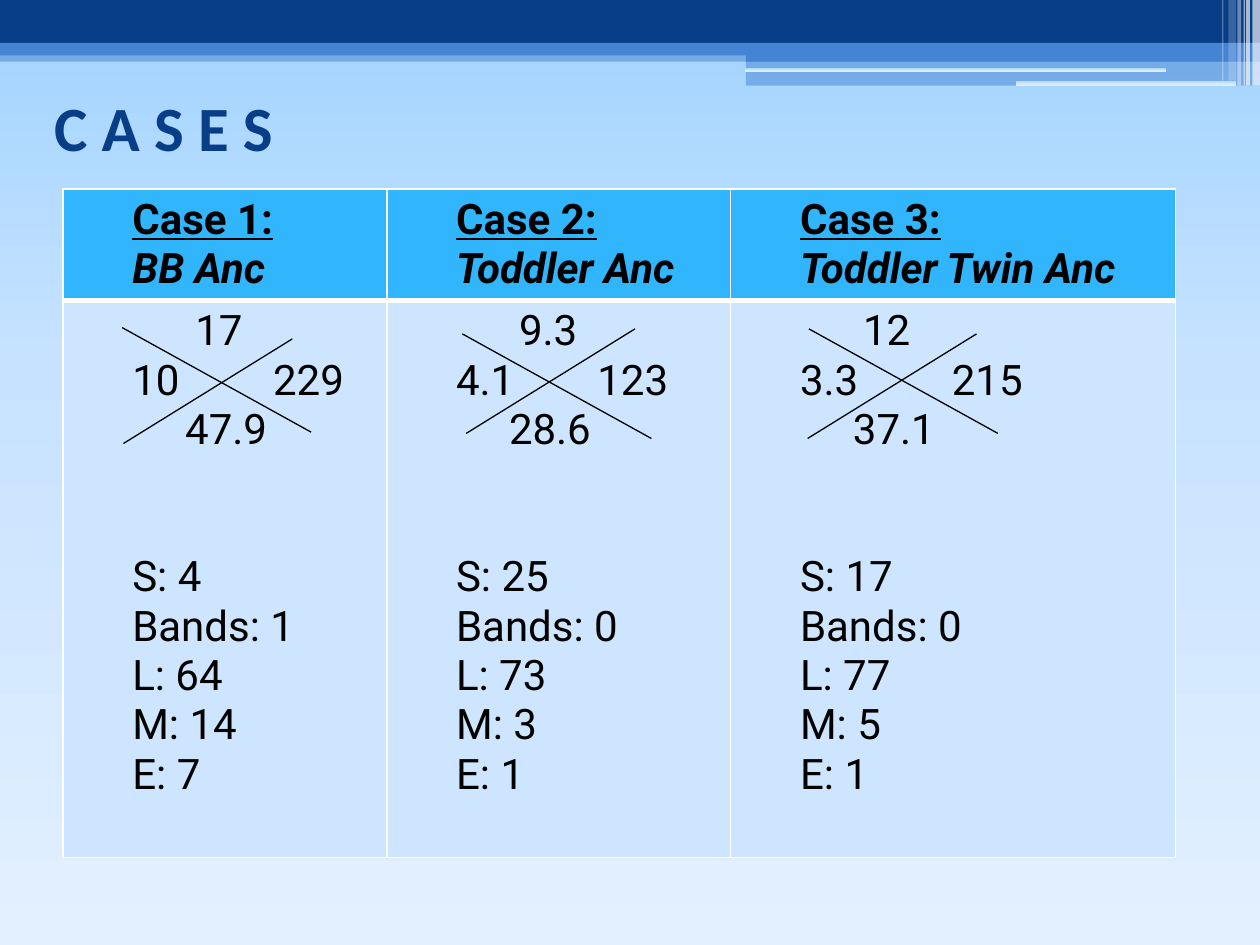
from copy import deepcopy

from lxml import etree
from pptx import Presentation
from pptx.dml.color import RGBColor
from pptx.enum.shapes import MSO_CONNECTOR, MSO_SHAPE
from pptx.enum.text import MSO_ANCHOR, PP_ALIGN
from pptx.oxml.ns import qn
from pptx.util import Inches, Pt

RECT, ROUND = MSO_SHAPE.RECTANGLE, MSO_SHAPE.ROUNDED_RECTANGLE
STRAIGHT = MSO_CONNECTOR.STRAIGHT
MIDDLE, LEFT = MSO_ANCHOR.MIDDLE, PP_ALIGN.LEFT

NAVY = RGBColor(0x07, 0x3E, 0x87)
BLUE = RGBColor(0x45, 0x84, 0xD3)
HEADER = RGBColor(0x31, 0xB6, 0xFD)
BODY = RGBColor(0xCD, 0xE5, 0xFE)
WHITE = RGBColor(0xFF, 0xFF, 0xFF)
BLACK = RGBColor(0, 0, 0)
SKY = [(0, RGBColor(0xA1, 0xD3, 0xFF)), (0.38, RGBColor(0xC6, 0xE2, 0xFF)),
       (1, RGBColor(0xE3, 0xF0, 0xFF))]


def fill_sky(fill, element):
    """Vertical three-stop gradient."""
    fill.gradient()
    fill.gradient_angle = 270
    stops = element.find(".//" + qn("a:gsLst"))
    stops.append(deepcopy(stops[-1]))
    for stop, (position, color) in zip(fill.gradient_stops, SKY):
        stop.position = position
        stop.color.rgb = color


def add_paragraph(tf, *texts, indent=0.45, **font):
    """Write runs into the empty first paragraph, or add one."""
    p = tf.paragraphs[0]
    if p.runs:
        p = tf.add_paragraph()
    p.level = 1
    pPr = p._p.get_or_add_pPr()
    pPr.set("marL", str(Inches(indent)))
    pPr.set("indent", "0")
    style = {"name": "Roboto", "size": Pt(24), "bold": False, **font}
    for text in texts:
        r = p.add_run()
        r.text = text
        r.font.color.rgb = BLACK
        for name, value in style.items():
            setattr(r.font, name, value)
    return p


prs = Presentation()
prs.slide_width, prs.slide_height = Inches(10), Inches(7.5)
s = prs.slides.add_slide(prs.slide_layouts[5])
fill_sky(s.background.fill, s._element)

# Top bands and stripes: shape, left, top, width, height, colour, opacity %
bands = [
    (RECT, 0, 0.4, 10, 0.09, BLUE, 50),
    (RECT, 0, 0, 10, 0.34, NAVY, 100),
    (RECT, 0, 0.34, 10, 0.1, BLUE, 100),
    (RECT, 5.92, 0.39, 4.08, 0.1, BLUE, 100),
    (RECT, 5.92, 0.48, 4.08, 0.2, BLUE, 50),
    (ROUND, 5.91, 0.54, 3.35, 0.03, None, 100),
    (ROUND, 8.06, 0.64, 1.75, 0.04, None, 100),
    (RECT, 9.94, 0, 0.06, 0.68, WHITE, 65),
    (RECT, 9.89, 0, 0.03, 0.68, WHITE, 65),
    (RECT, 9.87, 0, 0.01, 0.68, WHITE, 60),
    (RECT, 9.82, 0, 0.03, 0.68, WHITE, 40),
    (RECT, 9.75, 0, 0.06, 0.64, WHITE, 20),
    (RECT, 9.7, 0, 0.01, 0.64, WHITE, 30),
]
for kind, x, y, w, h, color, opacity in bands:
    sp = s.shapes.add_shape(kind, Inches(x), Inches(y), Inches(w), Inches(h))
    sp.shadow.inherit = False
    sp.line.fill.background()
    if color is None:
        fill_sky(sp.fill, sp._element)
        continue
    sp.fill.solid()
    sp.fill.fore_color.rgb = color
    if opacity < 100:
        clr = sp._element.spPr.find(".//" + qn("a:srgbClr"))
        etree.SubElement(clr, qn("a:alpha")).set("val", str(opacity * 1000))

# Title
title = s.shapes.title
title.left, title.top = Inches(0.33), Inches(0.42)
title.width, title.height = Inches(9), Inches(1.17)
tf = title.text_frame
tf.vertical_anchor = MIDDLE
p = tf.paragraphs[0]
p.alignment = LEFT
r = p.add_run()
r.text = "C A S E S"
r.font.color.rgb = NAVY
for name, value in {"name": "Calibri", "size": Pt(36), "bold": True}.items():
    setattr(r.font, name, value)

# Table: name, values (top, left, right, bottom), gap in points, differential
cases = [
    ("BB Anc", ("17", "10", "229", "47.9"), 47.5, (4, 1, 64, 14, 7)),
    ("Toddler Anc", ("9.3", "4.1", "123", "28.6"), 41.5, (25, 0, 73, 3, 1)),
    ("Toddler Twin Anc", ("12", "3.3", "215", "37.1"), 47.5, (17, 0, 77, 5, 1)),
]
labels = ("S", "Bands", "L", "M", "E")
table = s.shapes.add_table(2, 3, Inches(0.5), Inches(1.5),
                           Inches(8.83), Inches(5.29)).table
for col, width in zip(table.columns, (2.57, 2.73, 3.53)):
    col.width = Inches(width)
for row, height in zip(table.rows, (0.87, 4.42)):
    row.height = Inches(height)

for i, (name, (top, left, right, bottom), gap, counts) in enumerate(cases):
    head, body = table.cell(0, i), table.cell(1, i)
    tf = head.text_frame
    add_paragraph(tf, f"Case {i + 1}:", bold=True, underline=True)
    add_paragraph(tf, name, bold=True, italic=True)

    # Character spacing on the space holds the two side values apart
    tf = body.text_frame
    add_paragraph(tf, top, indent=0.95)
    p = add_paragraph(tf, left, " ", right)
    p.runs[1].font._element.set("spc", str(int(gap * 100)))
    add_paragraph(tf, bottom, indent=0.87)
    for label, count in zip(labels, counts):
        p = add_paragraph(tf, f"{label}: {count}")
        if label == "S":
            p.space_before = Pt(56)

    # Cell borders go before the fill
    for cell, color, thick in ((head, HEADER, "lnB"), (body, BODY, "lnT")):
        tcPr = cell._tc.get_or_add_tcPr()
        for side in ("lnL", "lnR", "lnT", "lnB"):
            ln = etree.SubElement(tcPr, qn("a:" + side),
                                  w=str(Pt(3 if side == thick else 1)))
            solid = etree.SubElement(ln, qn("a:solidFill"))
            etree.SubElement(solid, qn("a:srgbClr"), val=str(WHITE))
        cell.fill.solid()
        cell.fill.fore_color.rgb = color

# Crosses between the values: start x, start y, horizontal run
strokes = [(2.32, 2.69, -1.34), (0.97, 2.6, 1.5), (7.75, 2.65, -1.34),
           (5.04, 2.61, -1.34), (6.42, 2.61, 1.5), (3.67, 2.65, 1.5)]
for x, y, run in strokes:
    line = s.shapes.add_connector(STRAIGHT, Inches(x), Inches(y),
                                  Inches(x + run), Inches(y + 0.83))
    line.line.color.rgb = BLACK
    line.line.width = Pt(0.75)
    etree.SubElement(line._element.spPr, qn("a:effectLst"))

prs.save("out.pptx")
